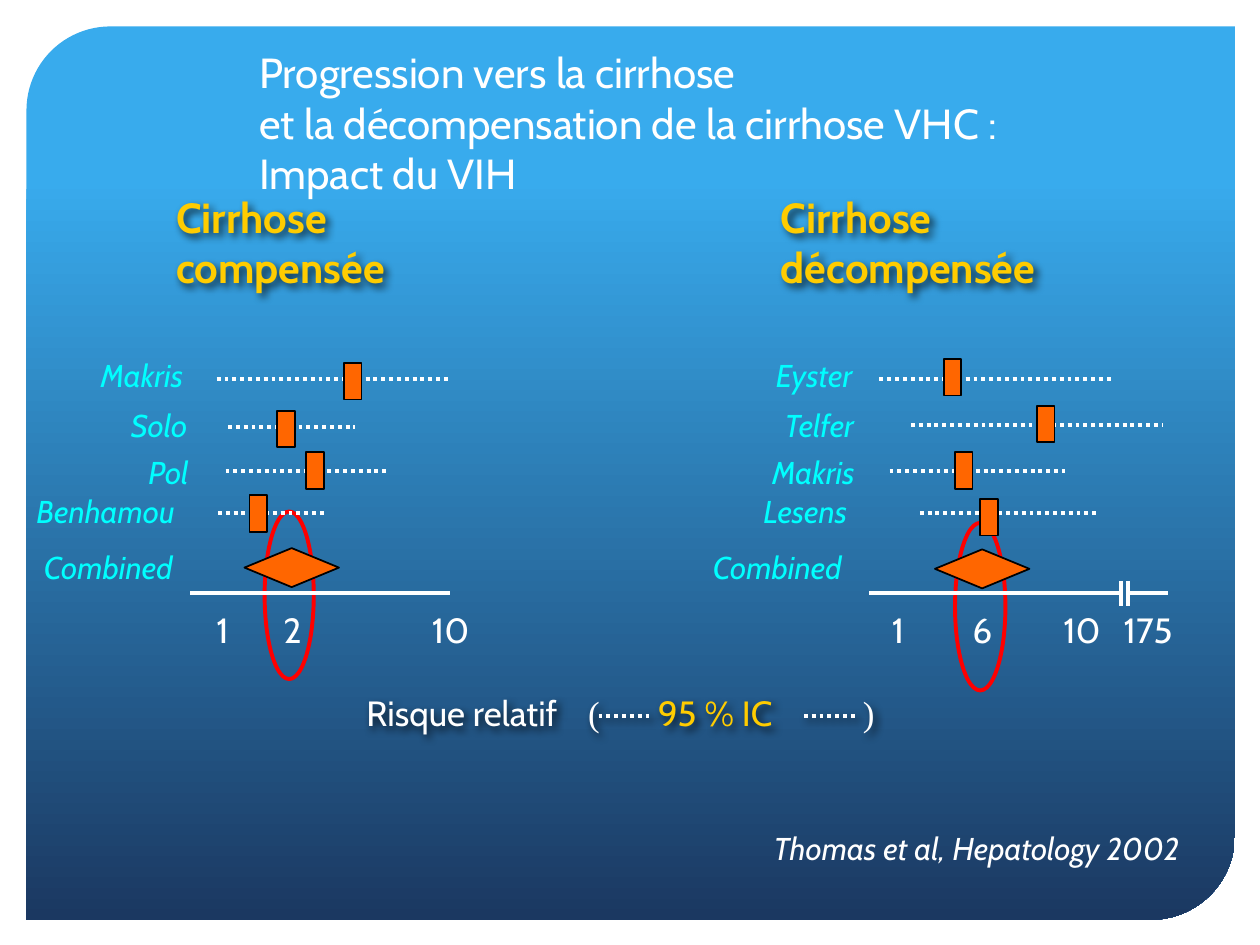
from dataclasses import dataclass

from lxml import etree
from pptx import Presentation
from pptx.dml.color import RGBColor
from pptx.enum.dml import MSO_LINE
from pptx.enum.shapes import MSO_CONNECTOR, MSO_SHAPE
from pptx.enum.text import MSO_ANCHOR, MSO_AUTO_SIZE, PP_ALIGN
from pptx.oxml.ns import qn
from pptx.util import Inches, Pt

WHITE = RGBColor(0xFF, 0xFF, 0xFF)
BLACK = RGBColor(0x00, 0x00, 0x00)
SKY = RGBColor(0x38, 0xAB, 0xED)
NAVY = RGBColor(0x1B, 0x38, 0x61)
GOLD = RGBColor(0xFF, 0xCC, 0x00)
CYAN = RGBColor(0x00, 0xFF, 0xFF)
ORANGE = RGBColor(0xFF, 0x66, 0x00)
RED = RGBColor(0xFF, 0x00, 0x00)

STRAIGHT = MSO_CONNECTOR.STRAIGHT
DOTTED = MSO_LINE.ROUND_DOT
RECTANGLE = MSO_SHAPE.RECTANGLE
DIAMOND = MSO_SHAPE.DIAMOND
ELLIPSE = MSO_SHAPE.OVAL
DIAGONAL_ROUNDED = MSO_SHAPE.ROUND_2_DIAG_RECTANGLE
FIT_SHAPE = MSO_AUTO_SIZE.SHAPE_TO_FIT_TEXT
FIXED = MSO_AUTO_SIZE.NONE
TOP, BOTTOM = MSO_ANCHOR.TOP, MSO_ANCHOR.BOTTOM
LEFT, RIGHT = PP_ALIGN.LEFT, PP_ALIGN.RIGHT

# Grid of 100 columns by 75 rows
COLUMNS, ROWS = 100, 75
PAGE_WIDTH, PAGE_HEIGHT = Inches(10), Inches(7.5)

# Text formats
TITLE = dict(name="Cabin", size=Pt(24))
HEADING = dict(name="Cabin", size=Pt(24), bold=True)
STUDY = dict(name="Cabin", size=Pt(18), italic=True)
NUMBER = dict(name="Cabin", size=Pt(20))
BRACKET = dict(name="Times New Roman", size=Pt(20))

LABEL_HEIGHT, NUMBER_HEIGHT = 4, 4.3
MARK_WIDTH, MARK_HEIGHT = 1.4, 2.9
NUMBER_ROW, AXIS_ROW, LEGEND_ROW = 47.8, 47.1, 54.4


@dataclass
class Panel:
    heading: str
    heading_area: tuple
    labels: list   # study, left, top, width
    ranges: list   # left, right, row of each interval
    marks: list    # left, top of each estimate
    ellipse: tuple
    diamond: tuple
    numbers: list  # value, left, width
    axes: list     # left, right of each axis part
    breaks: list   # columns of the axis break


PANELS = [
    Panel("Cirrhose\ncompensée", (13, 14.7, 19.5, 9),
          [("Makris", 7, 27.8, 9.4), ("Solo", 9.4, 31.7, 7), ("Pol", 10.8, 35.5, 5.6),
           ("Benhamou", 1.9, 38.6, 14.1), ("Combined", 2.5, 43, 13.4)],
          [(17.2, 35.7, 30.1), (18.1, 28.2, 33.9), (17.9, 30.9, 37.4), (17.3, 26, 40.7)],
          [(27.3, 28.8), (22, 32.6), (24.3, 35.9), (19.8, 39.3)],
          (21, 40.6, 3.9, 13.3), (19.4, 43.5, 7.5, 3.1),
          [("1", 16.2, 3.6), ("2", 21.5, 3.6), ("10", 33.3, 5.1)],
          [(15.1, 35.7)], []),
    Panel("Cirrhose\ndécompensée", (61, 14.7, 23.4, 9),
          [("Eyster", 60.6, 27.8, 9.1), ("Telfer", 61.3, 31.7, 8.4),
           ("Makris", 60.3, 35.5, 9.4), ("Lesens", 59.6, 38.6, 10.1),
           ("Combined", 55.6, 43, 13.4)],
          [(69.8, 88.4, 30.1), (72.3, 92.3, 33.7), (70.6, 84.5, 37.4), (73, 87.3, 40.7)],
          [(74.9, 28.5), (82.3, 32.2), (75.8, 35.9), (77.8, 39.6)],
          (75.8, 41.5, 4, 13.3), (74.2, 43.6, 7.5, 3.1),
          [("1", 69.8, 3.6), ("6", 76.2, 3.6), ("10", 83.4, 5.1), ("175", 88.2, 6.6)],
          [(69, 89), (89.7, 92.7)], [89, 89.5]),
]


def col(number):
    return round(PAGE_WIDTH * number / COLUMNS)


def row(number):
    return round(PAGE_HEIGHT * number / ROWS)


def place(left, top, width, height):
    return col(left), row(top), col(width), row(height)


def set_shadow(shape, visible=False):
    """Add an effect list, empty unless a soft shadow is wanted."""
    effects = etree.SubElement(shape._element.spPr, qn("a:effectLst"))
    if visible:
        shadow = etree.SubElement(effects, qn("a:outerShdw"), blurRad=str(Pt(5)),
                                  dist=str(Pt(3)), dir=str(45 * 60000))
        color = etree.SubElement(shadow, qn("a:srgbClr"), val=str(BLACK))
        etree.SubElement(color, qn("a:alpha"), val="75000")


def add_text(page, text, area, style, color=WHITE, shadow=False, wrap=False,
             fit=FIT_SHAPE, anchor=TOP, align=LEFT, spacing=None):
    box = page.shapes.add_textbox(*place(*area))
    frame = box.text_frame
    frame.word_wrap, frame.auto_size, frame.vertical_anchor = wrap, fit, anchor
    para = frame.paragraphs[0]
    para.text = text
    para.alignment, para.line_spacing = align, spacing
    for span in para.runs:
        for attribute, value in style.items():
            setattr(span.font, attribute, value)
        span.font.color.rgb = color
    set_shadow(box, shadow)


def add_line(page, start, end, dash=None, shadow=False):
    line = page.shapes.add_connector(STRAIGHT, col(start[0]), row(start[1]),
                                     col(end[0]), row(end[1]))
    line.line.color.rgb = WHITE
    line.line.width = Pt(2.25)
    if dash:
        line.line.dash_style = dash
    set_shadow(line, shadow)


def add_mark(page, kind, area, fill=ORANGE, outline=BLACK, width=1):
    shape = page.shapes.add_shape(kind, *place(*area))
    if fill is None:
        shape.fill.background()
    else:
        shape.fill.solid()
        shape.fill.fore_color.rgb = fill
    shape.line.color.rgb = outline
    shape.line.width = Pt(width)
    shape.shadow.inherit = False


def add_backdrop(page):
    panel = page.shapes.add_shape(DIAGONAL_ROUNDED, *place(2.1, 2.1, 95.9, 70.9))
    panel.adjustments[0], panel.adjustments[1] = 0.094, 0
    panel.fill.gradient()
    panel.fill.gradient_angle = 270
    for stop, color, position in zip(panel.fill.gradient_stops, (SKY, NAVY), (0.17, 1)):
        stop.color.rgb = color
        stop.position = position
    panel.line.fill.background()
    panel.shadow.inherit = False


def add_forest_plot(page, panel):
    add_text(page, panel.heading, panel.heading_area, HEADING, GOLD, shadow=True)
    for study, left, top, width in panel.labels:
        add_text(page, study, (left, top, width, LABEL_HEIGHT), STUDY, CYAN)
    # Intervals and estimates
    add_mark(page, ELLIPSE, panel.ellipse, None, RED, 2.25)
    for left, right, level in panel.ranges:
        add_line(page, (left, level), (right, level), DOTTED)
    for left, top in panel.marks:
        add_mark(page, RECTANGLE, (left, top, MARK_WIDTH, MARK_HEIGHT))
    # Axis
    for left, right in panel.axes:
        add_line(page, (left, AXIS_ROW), (right, AXIS_ROW))
    for x in panel.breaks:
        add_line(page, (x, AXIS_ROW - 1), (x, AXIS_ROW + 1))
    for value, left, width in panel.numbers:
        add_text(page, value, (left, NUMBER_ROW, width, NUMBER_HEIGHT), NUMBER)
    add_mark(page, DIAMOND, panel.diamond)


def add_legend(page):
    for text, left, width, style, color in [
            ("Risque relatif", 28.1, 18.2, NUMBER, WHITE), ("(", 45.7, 2.9, BRACKET, WHITE),
            (" 95 % IC", 50.6, 12.6, NUMBER, GOLD), (")", 67.5, 2.9, BRACKET, WHITE)]:
        add_text(page, text, (left, LEGEND_ROW, width, NUMBER_HEIGHT), style, color,
                 shadow=True)
    for left in (47.5, 63.8):
        add_line(page, (left, 56.8), (left + 4.2, 56.8), DOTTED, shadow=True)


def main():
    deck = Presentation()
    deck.slide_width, deck.slide_height = PAGE_WIDTH, PAGE_HEIGHT
    page = deck.slides.add_slide(deck.slide_layouts[6])
    add_backdrop(page)
    for panel in PANELS:
        add_forest_plot(page, panel)
    add_legend(page)
    # Title and source
    add_text(page, "Progression vers la cirrhose\n"
             "et la décompensation de la cirrhose VHC :\nImpact du VIH",
             (19.6, 0.7, 78.8, 15.5), TITLE, wrap=True, fit=FIXED, anchor=BOTTOM)
    add_text(page, "Thomas et al, Hepatology 2002", (48.4, 66.6, 46.2, 2.8), STUDY,
             wrap=True, align=RIGHT, spacing=0.5)
    deck.save("out.pptx")


if __name__ == "__main__":
    main()
